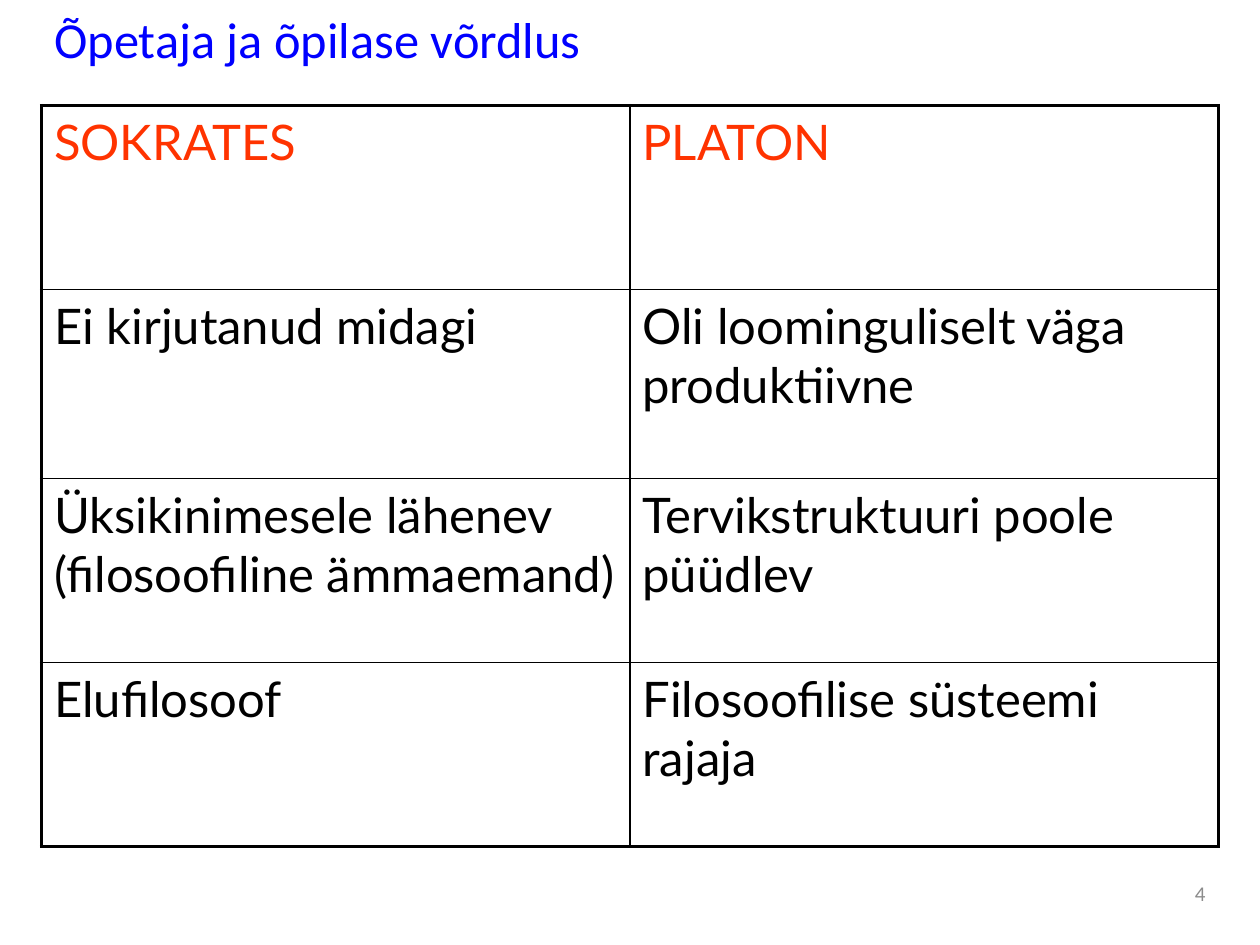
from lxml.etree import SubElement
from pptx import Presentation
from pptx.dml.color import RGBColor
from pptx.enum.text import MSO_ANCHOR, MSO_AUTO_SIZE, PP_ALIGN
from pptx.oxml.ns import qn
from pptx.util import Cm, Pt

LEFT = 0.84
COLUMN_WIDTH = 11.86
ROW_HEIGHTS = [3.71, 3.81, 3.71, 3.71]
OUTER_LINE, INNER_LINE = 2.25, 1
BLACK = "000000"

COMPARISON = [
    ("SOKRATES", "PLATON"),
    ("Ei kirjutanud midagi", "Oli loominguliselt väga produktiivne"),
    ("Üksikinimesele lähenev (filosoofiline ämmaemand)", "Tervikstruktuuri poole püüdlev"),
    ("Elufilosoof", "Filosoofilise süsteemi rajaja"),
]


def set_color(color_format, value):
    color_format.rgb = RGBColor.from_string(value)


def write_text(text_frame, text, font_name, size, color, alignment=PP_ALIGN.LEFT):
    text_frame.text = text
    text_frame.word_wrap = True
    paragraph = text_frame.paragraphs[0]
    paragraph.alignment = alignment
    font = paragraph.runs[0].font
    font.name = font_name
    font.size = Pt(size)
    font.fill.solid()
    set_color(font.fill.fore_color, color)


def add_title(slide, text):
    title = slide.shapes.title
    title.left, title.top = Cm(LEFT), Cm(0.64)
    title.width, title.height = Cm(2 * COLUMN_WIDTH), Cm(0.28)
    write_text(title.text_frame, text, "Calibri", 28.8, "0000FF")
    title.text_frame.auto_size = MSO_AUTO_SIZE.NONE
    title.text_frame.vertical_anchor = MSO_ANCHOR.MIDDLE


def set_borders(cell, widths):
    properties = cell._tc.get_or_add_tcPr()
    for position, (side, width) in enumerate(widths.items()):
        line = properties.makeelement(qn(f"a:{side}"), {"w": str(Pt(width))})
        fill = SubElement(line, qn("a:solidFill"))
        SubElement(fill, qn("a:srgbClr"), val=BLACK)
        properties.insert(position, line)


def add_comparison_table(slide, rows):
    row_count, column_count = len(rows), len(rows[0])
    table = slide.shapes.add_table(
        row_count, column_count, Cm(LEFT), Cm(2.13),
        Cm(column_count * COLUMN_WIDTH), Cm(sum(ROW_HEIGHTS)),
    ).table
    for column in table.columns:
        column.width = Cm(COLUMN_WIDTH)
    for row, height in zip(table.rows, ROW_HEIGHTS):
        row.height = Cm(height)

    for row_index, texts in enumerate(rows):
        for column_index, text in enumerate(texts):
            cell = table.cell(row_index, column_index)
            cell.fill.background()
            color = "FF3300" if row_index == 0 else BLACK
            write_text(cell.text_frame, text, "Lato", 28, color)
            at_edge = {
                "lnL": column_index == 0,
                "lnR": column_index == column_count - 1,
                "lnT": row_index == 0,
                "lnB": row_index == row_count - 1,
            }
            set_borders(cell, {
                side: OUTER_LINE if outer else INNER_LINE
                for side, outer in at_edge.items()
            })


def add_slide_number(slide, text):
    box = slide.shapes.add_textbox(Cm(18.2), Cm(17.35), Cm(6.35), Cm(1.32))
    write_text(box.text_frame, text, "Calibri", 12, "8C8C8C", PP_ALIGN.RIGHT)
    box.text_frame.vertical_anchor = MSO_ANCHOR.MIDDLE


def main():
    presentation = Presentation()
    presentation.slide_width, presentation.slide_height = Cm(25.4), Cm(19.05)
    slide = presentation.slides.add_slide(presentation.slide_layouts[5])
    add_title(slide, "Õpetaja ja õpilase võrdlus")
    add_comparison_table(slide, COMPARISON)
    add_slide_number(slide, "4")
    presentation.save("out.pptx")


if __name__ == "__main__":
    main()
